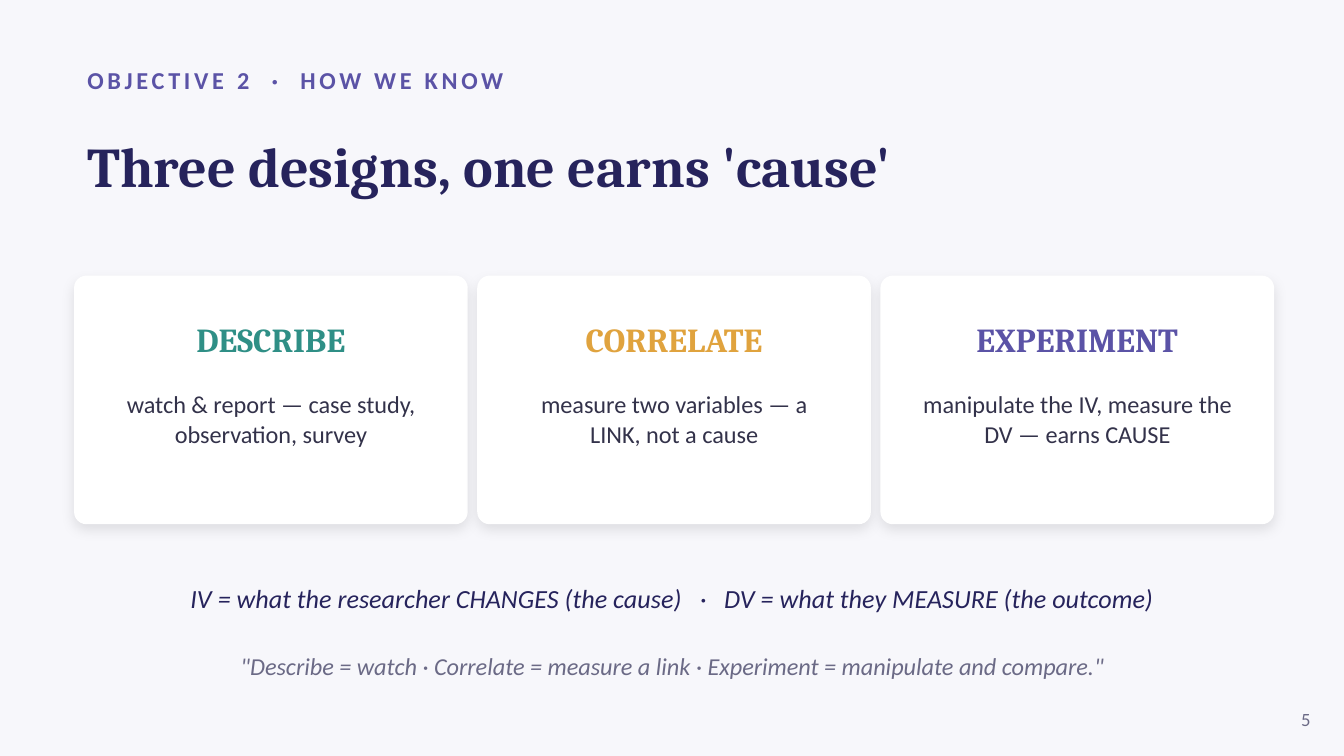
from dataclasses import dataclass

from lxml.etree import SubElement
from pptx import Presentation
from pptx.dml.color import RGBColor as Color
from pptx.enum.shapes import MSO_SHAPE as Preset
from pptx.enum.text import MSO_ANCHOR as Anchor, MSO_AUTO_SIZE as AutoSize, PP_ALIGN as Align
from pptx.oxml.ns import qn
from pptx.util import Cm, Pt


@dataclass(frozen=True)
class Theme:
    background: str = "F7F7FB"
    card: str = "FFFFFF"
    navy: str = "26235C"
    violet: str = "5B53A6"
    teal: str = "2F8F86"
    amber: str = "E0A33E"
    body: str = "33324A"
    muted: str = "6B6A86"
    shadow: str = "000000"
    serif: str = "Cambria"
    sans: str = "Calibri"
    title_size: int = 30
    heading_size: int = 18
    takeaway_size: int = 14
    text_size: int = 13
    number_size: int = 10


class SlideBuilder:
    def __init__(self, presentation, theme):
        self.theme = theme
        self.slide = presentation.slides.add_slide(presentation.slide_layouts[5])
        fill = self.slide.background.fill
        fill.solid()
        fill.fore_color.rgb = Color.from_string(theme.background)

    def fill_text(self, shape, parts, color, size, name=None, align=Align.LEFT,
                  anchor=Anchor.MIDDLE, **styles):
        """Fill a text shape; each part is a text and its letter spacing in points."""
        frame = shape.text_frame
        frame_format = {"word_wrap": True, "auto_size": AutoSize.NONE, "vertical_anchor": anchor}
        for key, value in frame_format.items():
            setattr(frame, key, value)
        paragraph = frame.paragraphs[0]
        paragraph.alignment = align
        font_format = {"name": name or self.theme.sans, "size": Pt(size), **styles}
        for text, spacing in parts:
            run = paragraph.add_run()
            run.text = text
            for key, value in font_format.items():
                setattr(run.font, key, value)
            run.font.color.rgb = Color.from_string(color)
            if spacing:
                run.font._element.set("spc", str(round(spacing * 100)))

    def title(self, text, left, top, width, height):
        shape = self.slide.shapes.title
        place = {"left": left, "top": top, "width": width, "height": height}
        for key, value in place.items():
            setattr(shape, key, Cm(value))
        self.fill_text(shape, [(text, 0)], self.theme.navy, self.theme.title_size,
                       self.theme.serif, bold=True)

    def text(self, parts, left, top, width, height, color, size, **styles):
        box = self.slide.shapes.add_textbox(Cm(left), Cm(top), Cm(width), Cm(height))
        if isinstance(parts, str):
            parts = [(parts, 0)]
        self.fill_text(box, parts, color, size, **styles)

    def soft_shadow(self, shape):
        shape.shadow.inherit = False
        effects = shape._element.spPr.find(qn("a:effectLst"))
        shadow = SubElement(effects, qn("a:outerShdw"), blurRad=str(Pt(7)), dist=str(Pt(3)),
                            dir="5400000", algn="bl", rotWithShape="0")
        color = SubElement(shadow, qn("a:srgbClr"), val=self.theme.shadow)
        SubElement(color, qn("a:alpha"), val="10000")

    def card(self, heading, description, color, left, top, width, height):
        theme = self.theme
        panel = self.slide.shapes.add_shape(
            Preset.ROUNDED_RECTANGLE, Cm(left), Cm(top), Cm(width), Cm(height))
        panel.adjustments[0] = 0.05
        panel.fill.solid()
        panel.fill.fore_color.rgb = Color.from_string(theme.card)
        panel.line.fill.background()
        self.soft_shadow(panel)

        padding = 0.51
        self.text(heading, left, top + 0.63, width, 1.14, color, theme.heading_size,
                  name=theme.serif, align=Align.CENTER, bold=True)
        self.text(description, left + padding, top + 2.03, width - 2 * padding, 2.41,
                  theme.body, theme.text_size, align=Align.CENTER, anchor=Anchor.TOP)


def main():
    theme = Theme()
    presentation = Presentation()
    presentation.slide_width = Cm(25.4)
    presentation.slide_height = Cm(14.29)
    builder = SlideBuilder(presentation, theme)
    margin, content_width = 1.4, 22.6

    # Section label and title; the dots get wider spacing on both sides
    builder.text([("OBJECTIVE 2", 2), (" ·", 7), (" HOW WE KNOW", 2)],
                 margin, 1.07, 22.86, 0.89, theme.violet, theme.text_size, bold=True)
    builder.title("Three designs, one earns 'cause'", margin, 1.98, content_width, 2.29)

    # Research design cards
    designs = [
        ("DESCRIBE", "watch & report — case study, observation, survey", theme.teal),
        ("CORRELATE", "measure two variables — a LINK, not a cause", theme.amber),
        ("EXPERIMENT", "manipulate the IV, measure the DV — earns CAUSE", theme.violet),
    ]
    card_width, card_step = 7.44, 7.62
    for index, design in enumerate(designs):
        builder.card(*design, margin + index * card_step, 5.21, card_width, 4.7)

    # Takeaway and memory line
    builder.text([("IV = what the researcher CHANGES (the cause)", 0), (" ·", 6.3),
                  (" DV = what they MEASURE (the outcome)", 0)],
                 margin, 10.8, content_width, 1.02, theme.navy, theme.takeaway_size,
                 align=Align.CENTER, italic=True)
    builder.text('"Describe = watch · Correlate = measure a link · '
                 'Experiment = manipulate and compare."',
                 margin, 12.07, content_width, 1.02, theme.muted, theme.text_size,
                 align=Align.CENTER, italic=True)

    # Page number
    builder.text("5", 23.75, 13.21, 1.27, 0.76, theme.muted, theme.number_size,
                 align=Align.RIGHT)

    presentation.save("out.pptx")


if __name__ == "__main__":
    main()
